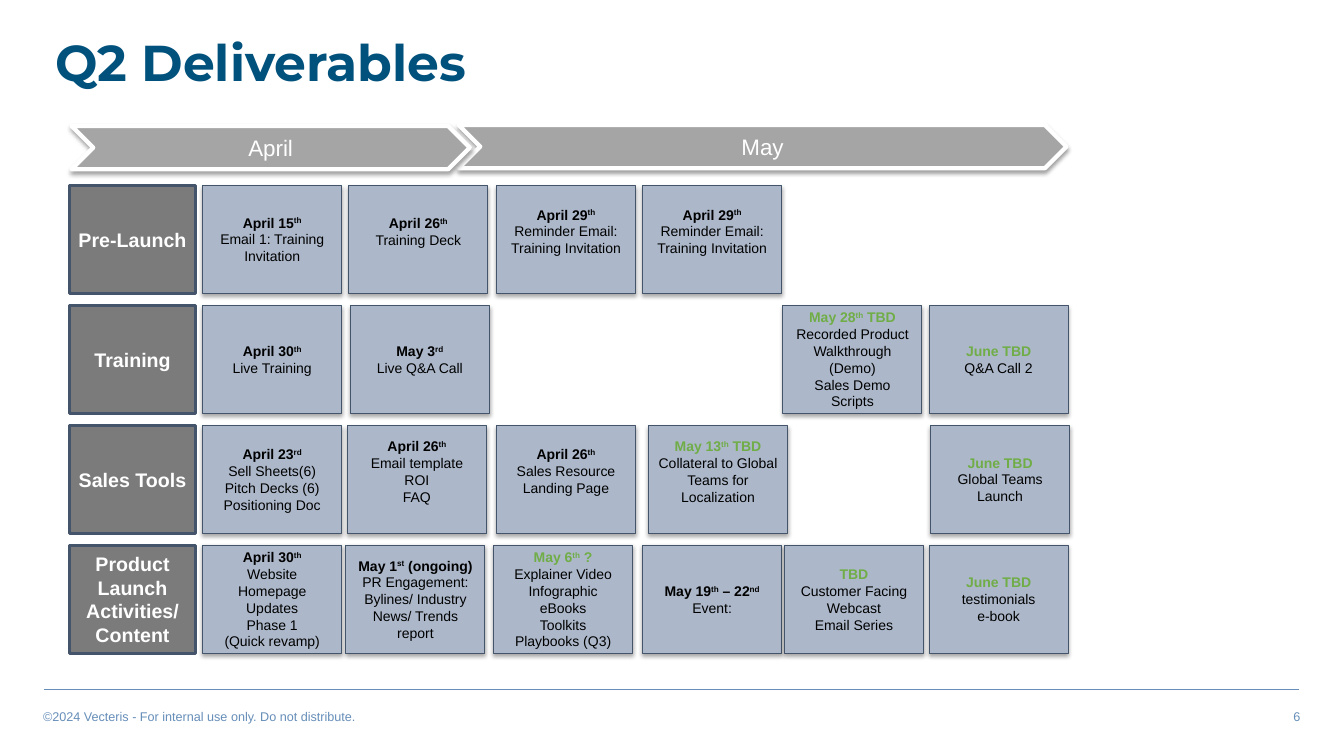
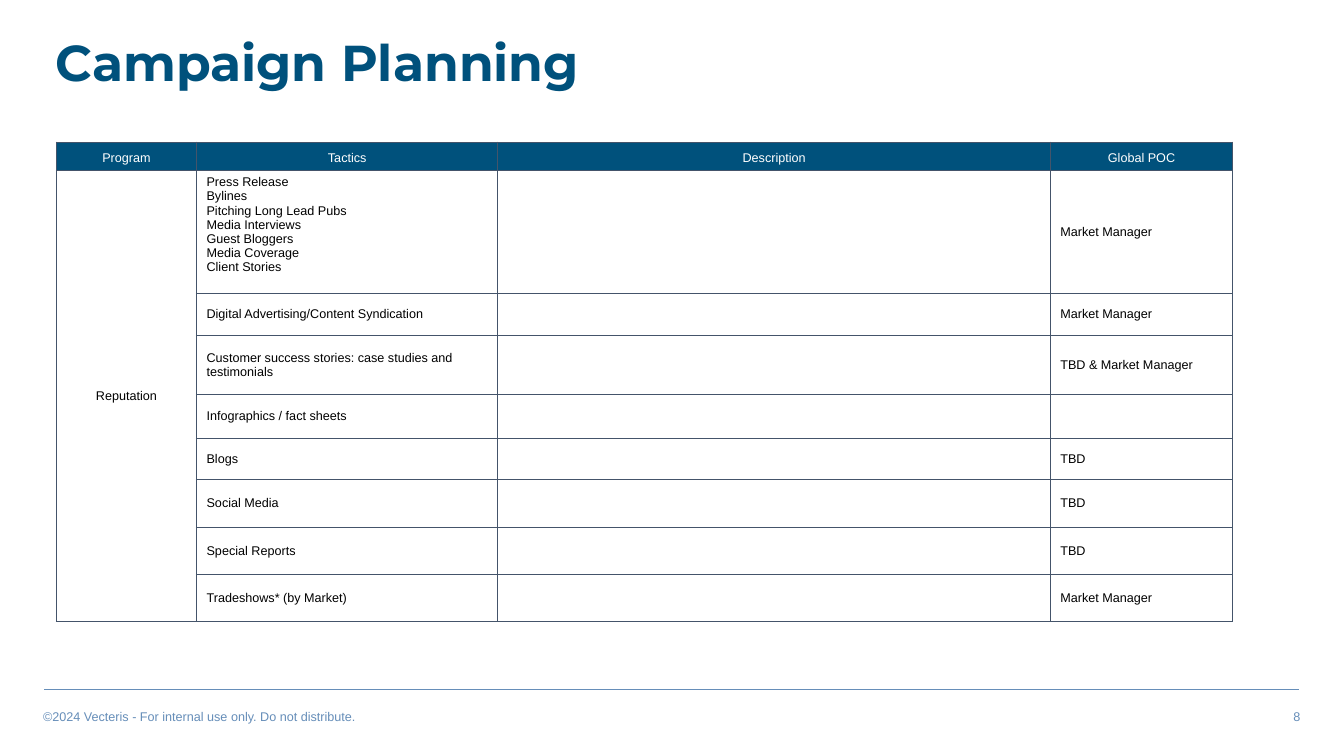
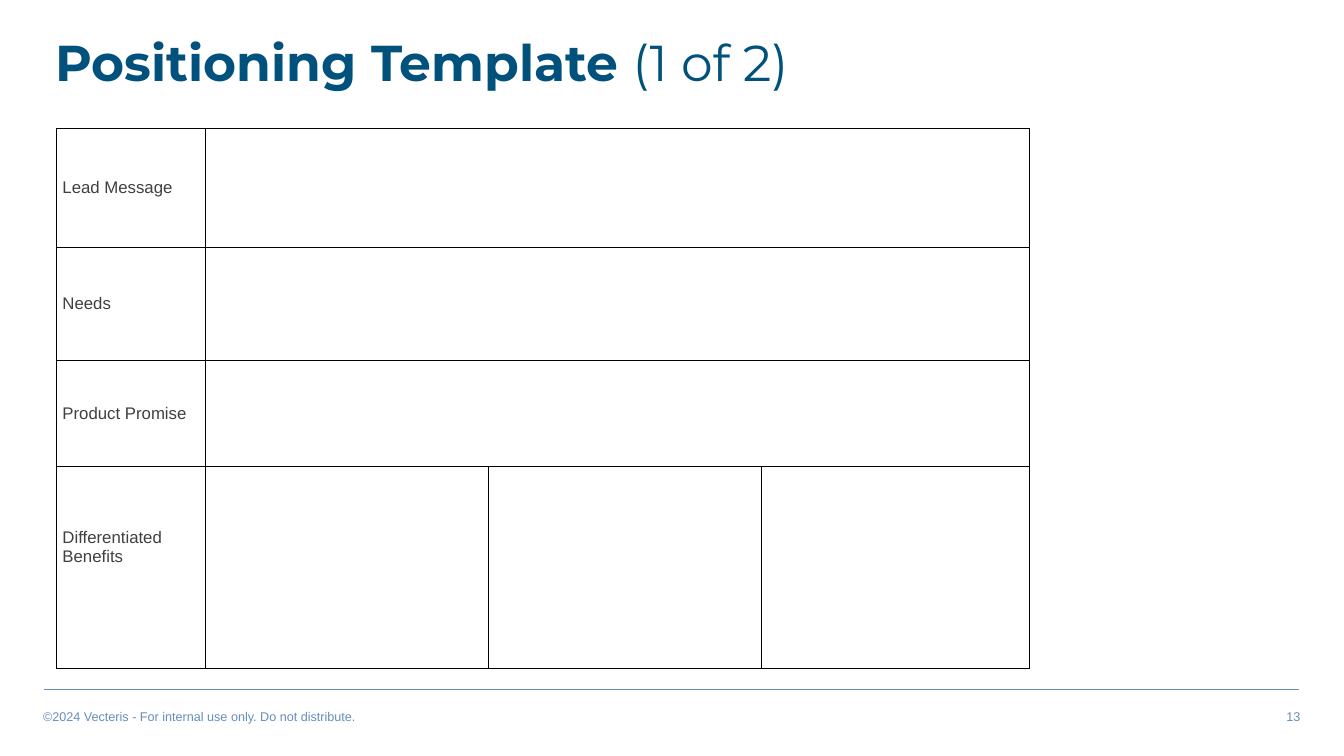
from itertools import product

from lxml import etree
from pptx import Presentation
from pptx.dml.color import RGBColor
from pptx.enum.shapes import MSO_CONNECTOR, MSO_SHAPE
from pptx.enum.text import MSO_ANCHOR, MSO_AUTO_SIZE, PP_ALIGN
from pptx.oxml.ns import qn
from pptx.util import Inches, Pt

NAVY = RGBColor(0x00, 0x51, 0x7C)
STEEL = RGBColor(0x66, 0x8E, 0xB9)
SLATE = RGBColor(0x44, 0x54, 0x6A)
MIST = RGBColor(0xAC, 0xB8, 0xCA)
GRAY = RGBColor(0x7B, 0x7B, 0x7B)
SILVER = RGBColor(0xA5, 0xA5, 0xA5)
CHARCOAL = RGBColor(0x40, 0x40, 0x40)
GREEN = RGBColor(0x70, 0xAD, 0x47)
BLACK = RGBColor(0x00, 0x00, 0x00)
WHITE = RGBColor(0xFF, 0xFF, 0xFF)

LEFT, CENTER, RIGHT = PP_ALIGN.LEFT, PP_ALIGN.CENTER, PP_ALIGN.RIGHT
TOP, MIDDLE, BOTTOM = MSO_ANCHOR.TOP, MSO_ANCHOR.MIDDLE, MSO_ANCHOR.BOTTOM
RECTANGLE, CHEVRON = MSO_SHAPE.RECTANGLE, MSO_SHAPE.CHEVRON
STRAIGHT = MSO_CONNECTOR.STRAIGHT
FIXED_SIZE = MSO_AUTO_SIZE.NONE

GRID_COLUMNS, GRID_ROWS = 133.33, 75
CELL = Inches(0.1)
TITLE_ONLY = 5
FOOTER = "©2024 Vecteris - For internal use only. Do not distribute."

LABEL_LEFT, CARD_LEFT, PLAN_TOP = 6.9, 20.1, 18.4
CARD_STEP, PLAN_STEP = 14.5, 11.9
LABEL_WIDTH, CARD_WIDTH, PLAN_HEIGHT = 12.5, 13.8, 10.7
BLANK_LINE = 1.6

PLAN = [
    ("Pre-Launch", [
        (0, BLACK, ["April 15", "th"], ["Email 1: Training Invitation"], 0),
        (1, BLACK, ["April 26", "th"], ["Training Deck"], 1),
        (2.01, BLACK, ["April 29", "th"], ["Reminder Email:", "Training Invitation"], 1),
        (3.01, BLACK, ["April 29", "th"], ["Reminder Email:", "Training Invitation"], 1),
    ]),
    ("Training", [
        (0, BLACK, ["April 30", "th"], ["Live Training"], 0),
        (1.01, BLACK, ["May 3", "rd"], ["Live Q&A Call"], 0),
        (3.97, GREEN, ["May 28", "th", " TBD"],
         ["Recorded Product Walkthrough (Demo)", "Sales Demo Scripts"], 0),
        (4.97, GREEN, ["June TBD"], ["Q&A Call 2"], 0),
    ]),
    ("Sales Tools", [
        (0, BLACK, ["April 23", "rd"],
         ["Sell Sheets(6)", "Pitch Decks (6)", "Positioning Doc"], 0),
        (0.99, BLACK, ["April 26", "th"], ["Email template", "ROI", "FAQ"], 1),
        (2.01, BLACK, ["April 26", "th"], ["Sales Resource Landing Page"], 1),
        (3.05, GREEN, ["May 13", "th", " TBD"],
         ["Collateral to Global Teams for Localization"], 1),
        (4.98, GREEN, ["June TBD"], ["Global Teams Launch"], 0),
    ]),
    ("Product Launch Activities/ Content", [
        (0, BLACK, ["April 30", "th"],
         ["Website Homepage Updates", "Phase 1", "(Quick revamp)"], 0),
        (0.98, BLACK, ["May 1", "st", " (ongoing)"],
         ["PR Engagement:", "Bylines/ Industry News/ Trends report"], 0),
        (1.99, GREEN, ["May 6", "th", " ?"],
         ["Explainer Video", "Infographic", "eBooks", "Toolkits", "Playbooks (Q3)"], 0),
        (3.01, BLACK, ["May 19", "th", " – 22", "nd"], ["Event:"], 0),
        (3.98, GREEN, ["TBD"], ["Customer Facing Webcast", "Email Series"], 0),
        (4.97, GREEN, ["June TBD"], ["testimonials", "e-book"], 0),
    ]),
]

TACTICS = [
    ("Press Release\nBylines\nPitching Long Lead Pubs\nMedia Interviews\n"
     "Guest Bloggers\nMedia Coverage\nClient Stories", "Market Manager"),
    ("Digital Advertising/Content Syndication", "Market Manager"),
    ("Customer success stories: case studies and testimonials", "TBD & Market Manager"),
    ("Infographics / fact sheets", ""),
    ("Blogs", "TBD"),
    ("Social Media", "TBD"),
    ("Special Reports", "TBD"),
    ("Tradeshows* (by Market)", "Market Manager"),
]

POSITIONING = ["Lead Message", "Needs", "Product Promise", "Differentiated Benefits"]


def grid(*lengths):
    return [int(length * CELL) for length in lengths]


class Deck:
    font = "Arial"
    title_font = "Montserrat"

    def __init__(self):
        self.presentation = Presentation()
        self.presentation.slide_width, self.presentation.slide_height = grid(
            GRID_COLUMNS, GRID_ROWS)
        self.slide = None

    def add_slide(self, number, title, title_note=""):
        layout = self.presentation.slide_layouts[TITLE_ONLY]
        self.slide = self.presentation.slides.add_slide(layout)
        self.title(title, title_note)
        self.line(4.4, 68.4, 128.9)
        self.text(3.3, 69.8, 53.3, 2.5, FOOTER, LEFT)
        self.text(76.7, 69.8, 53.3, 2.5, str(number), RIGHT)

    def title(self, text, note):
        shape = self.slide.shapes.title
        shape.left, shape.top, shape.width, shape.height = grid(4.5, 3.3, 101.6, 7.6)
        self.frame(shape, TOP)
        paragraph = shape.text_frame.paragraphs[0]
        paragraph.alignment = LEFT
        paragraph.line_spacing = 0.9
        self.run(paragraph, text, 36, NAVY, True, self.title_font)
        if note:
            self.run(paragraph, note, 36, NAVY, False, self.title_font)

    def frame(self, shape, anchor, side=1, bottom=0.5):
        frame = shape.text_frame
        frame.word_wrap = True
        frame.auto_size = FIXED_SIZE
        frame.vertical_anchor = anchor
        (frame.margin_left, frame.margin_top,
         frame.margin_right, frame.margin_bottom) = grid(side, 0.5, side, bottom)

    def run(self, paragraph, text, size, color, bold=False, font=None, raised=False):
        run = paragraph.add_run()
        run.text = text
        run.font.name = font or self.font
        run.font.size = Pt(size)
        run.font.bold = bold
        run.font.color.rgb = color
        if raised:
            run.font._element.set("baseline", "30000")

    def lines(self, frame, lines, size, color, alignment, bold=False, append=False):
        for index, line in enumerate(lines):
            fresh = append or index > 0
            paragraph = frame.add_paragraph() if fresh else frame.paragraphs[0]
            paragraph.alignment = alignment
            self.run(paragraph, line, size, color, bold)

    def text(self, column, row, columns, rows, text, alignment):
        box = self.slide.shapes.add_textbox(*grid(column, row, columns, rows))
        self.frame(box, TOP)
        self.lines(box.text_frame, [text], 9, STEEL, alignment)

    def line(self, column, row, end_column):
        connector = self.slide.shapes.add_connector(
            STRAIGHT, *grid(column, row, end_column, row))
        connector.line.color.rgb = STEEL
        connector.line.width = Pt(1)
        etree.SubElement(connector._element.spPr, qn("a:effectLst"))

    def shape(self, kind, column, row, columns, rows, fill, line, weight, opacity=0):
        shape = self.slide.shapes.add_shape(kind, *grid(column, row, columns, rows))
        shape.fill.solid()
        shape.fill.fore_color.rgb = fill
        shape.line.color.rgb = line
        shape.line.width = Pt(weight)
        shape.shadow.inherit = False
        if opacity:
            effects = shape._element.spPr.find(qn("a:effectLst"))
            shadow = etree.SubElement(
                effects, qn("a:outerShdw"), blurRad=str(Pt(3.1)), dist=str(Pt(1.8)),
                dir="5400000", rotWithShape="0")
            color = etree.SubElement(shadow, qn("a:srgbClr"), val=str(BLACK))
            etree.SubElement(color, qn("a:alpha"), val=str(opacity * 1000))
        return shape

    def month(self, column, row, columns, name):
        shape = self.shape(CHEVRON, column, row, columns, 4.3, SILVER, WHITE, 3, 37)
        self.frame(shape, MIDDLE)
        self.lines(shape.text_frame, [name], 16, WHITE, CENTER)

    def label(self, row, text):
        shape = self.shape(RECTANGLE, LABEL_LEFT, PLAN_TOP + row * PLAN_STEP,
                           LABEL_WIDTH, PLAN_HEIGHT, GRAY, SLATE, 2)
        self.frame(shape, MIDDLE, 0.5)
        self.lines(shape.text_frame, [text], 14, WHITE, CENTER, True)

    def card(self, row, column, color, date, lines, lift):
        shape = self.shape(RECTANGLE, CARD_LEFT + column * CARD_STEP,
                           PLAN_TOP + row * PLAN_STEP, CARD_WIDTH, PLAN_HEIGHT,
                           MIST, SLATE, 0.75, 35)
        self.frame(shape, MIDDLE, bottom=0.5 + lift * BLANK_LINE)
        heading = shape.text_frame.paragraphs[0]
        heading.alignment = CENTER
        for index, part in enumerate(date):
            self.run(heading, part, 10, color, True, raised=index % 2 == 1)
        self.lines(shape.text_frame, lines, 10, BLACK, CENTER, append=True)

    def table(self, column, row, columns, rows, border, weight):
        table = self.slide.shapes.add_table(
            len(rows), len(columns),
            *grid(column, row, sum(columns), sum(rows))).table
        table.first_row = table.horz_banding = False
        for item, width in zip(table.columns, grid(*columns)):
            item.width = width
        for item, height in zip(table.rows, grid(*rows)):
            item.height = height
        for position in product(range(len(rows)), range(len(columns))):
            cell = table.cell(*position)
            self.borders(cell, border, weight)
            cell.fill.background()
        return table

    def borders(self, cell, color, weight):
        properties = cell._tc.get_or_add_tcPr()
        for side in ("a:lnL", "a:lnR", "a:lnT", "a:lnB"):
            line = etree.SubElement(properties, qn(side), w=str(Pt(weight)))
            fill = etree.SubElement(line, qn("a:solidFill"))
            etree.SubElement(fill, qn("a:srgbClr"), val=str(color))

    def cell(self, cell, text, size, color, alignment=LEFT, anchor=MIDDLE,
             fill=None, side=1, edge=0.5, lift=0):
        cell.vertical_anchor = anchor
        (cell.margin_left, cell.margin_top,
         cell.margin_right, cell.margin_bottom) = grid(side, edge, side, edge + lift)
        if fill is not None:
            cell.fill.solid()
            cell.fill.fore_color.rgb = fill
        if text:
            self.lines(cell.text_frame, text.split("\n"), size, color, alignment)


def add_deliverables(deck):
    deck.add_slide(6, "Q2 Deliverables")
    deck.month(45.5, 12.4, 60.3, "May")
    deck.month(7.1, 12.5, 39.5, "April")
    for row, (label, cards) in enumerate(PLAN):
        deck.label(row, label)
        for card in cards:
            deck.card(row, *card)


def add_campaign(deck):
    deck.add_slide(8, "Campaign Planning")
    table = deck.table(5.6, 14.1, [13.9, 29.9, 54.8, 18.1],
                       [2.8, 12.2, 4.2, 5.8, 4.4, 4.1, 4.7, 4.7, 4.7], SLATE, 1)
    for column, heading in enumerate(["Program", "Tactics", "Description", "Global POC"]):
        deck.cell(table.cell(0, column), heading, 9, WHITE, CENTER, BOTTOM, NAVY)
    table.cell(1, 0).merge(table.cell(len(TACTICS), 0))
    deck.cell(table.cell(1, 0), "Reputation", 9, BLACK, CENTER)
    for row, (tactic, contact) in enumerate(TACTICS, 1):
        deck.cell(table.cell(row, 1), tactic, 9, BLACK, lift=1.4 if row == 1 else 0)
        deck.cell(table.cell(row, 3), contact, 9, BLACK)


def add_positioning(deck):
    deck.add_slide(13, "Positioning Template ", "(1 of 2)")
    table = deck.table(5.6, 12.7, [14.8, 28.1, 27, 26.6],
                       [11.8, 11.3, 10.5, 20], BLACK, 0.75)
    last = len(POSITIONING) - 1
    for row, label in enumerate(POSITIONING):
        deck.cell(table.cell(row, 0), label, 12, CHARCOAL, side=0.6, edge=0.4,
                  lift=4 if row == last else 0)
        if row < last:
            table.cell(row, 1).merge(table.cell(row, 3))


def main():
    deck = Deck()
    add_deliverables(deck)
    add_campaign(deck)
    add_positioning(deck)
    deck.presentation.save("out.pptx")


if __name__ == "__main__":
    main()
